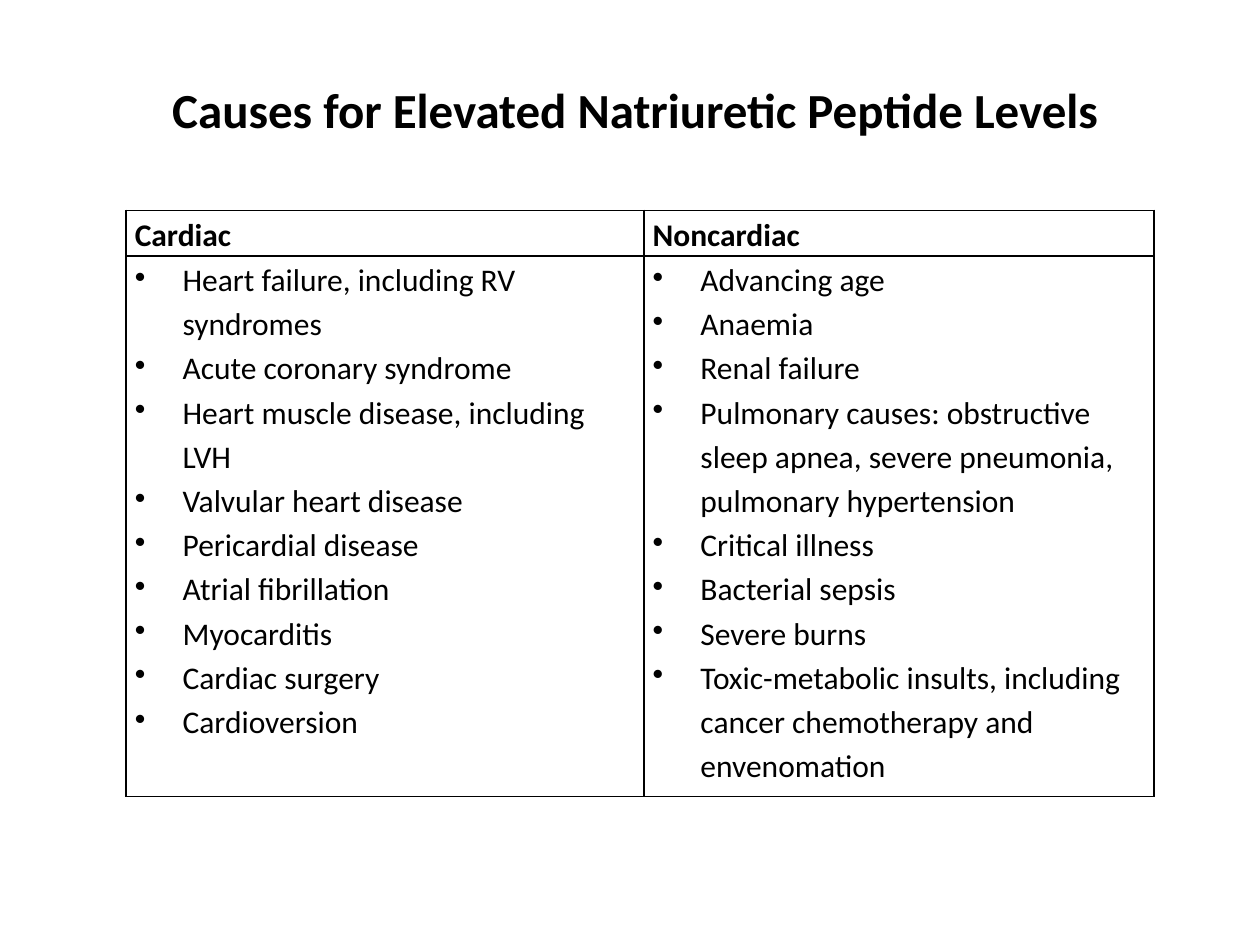
from lxml import etree
from pptx import Presentation
from pptx.dml.color import RGBColor
from pptx.enum.text import MSO_AUTO_SIZE, PP_ALIGN
from pptx.oxml.ns import qn
from pptx.util import Inches, Pt

BLACK = RGBColor(0, 0, 0)
CENTER, JUSTIFY = PP_ALIGN.CENTER, PP_ALIGN.JUSTIFY
GROW = MSO_AUTO_SIZE.SHAPE_TO_FIT_TEXT
COLS = [4.11, 4.05]
ROWS = [0.36, 4.29]
INDENT = Inches(0.38)
INSETS = {"margin_left": Inches(0.07), "margin_right": Inches(0.07),
          "margin_top": 0, "margin_bottom": 0}
CAUSES = {
    "Cardiac": [
        "Heart failure, including RV syndromes",
        "Acute coronary syndrome",
        "Heart muscle disease, including LVH",
        "Valvular heart disease",
        "Pericardial disease",
        "Atrial fibrillation",
        "Myocarditis",
        "Cardiac surgery",
        "Cardioversion",
    ],
    "Noncardiac": [
        "Advancing age",
        "Anaemia",
        "Renal failure",
        "Pulmonary causes: obstructive sleep apnea, severe pneumonia, "
        "pulmonary hypertension",
        "Critical illness",
        "Bacterial sepsis",
        "Severe burns",
        "Toxic-metabolic insults, including cancer chemotherapy and "
        "envenomation",
    ],
}


def write(para, text, size, bold):
    run = para.add_run()
    run.text = text
    look = {"name": "Calibri", "size": Pt(size), "bold": bold}
    for key, value in look.items():
        setattr(run.font, key, value)
    run.font.color.rgb = BLACK


def frame(cell):
    """Draw a thin black line on all four sides of a cell."""
    props = cell._tc.get_or_add_tcPr()
    for spot, side in enumerate(("lnL", "lnR", "lnT", "lnB")):
        line = etree.Element(qn(f"a:{side}"), w=str(Pt(1)))
        fill = etree.SubElement(line, qn("a:solidFill"))
        etree.SubElement(fill, qn("a:srgbClr"), val=str(BLACK))
        props.insert(spot, line)


prs = Presentation()
prs.slide_width, prs.slide_height = Inches(10), Inches(7.5)
slide = prs.slides.add_slide(prs.slide_layouts[6])

grid = slide.shapes.add_table(
    len(ROWS), len(COLS), Inches(1), Inches(1.67),
    Inches(sum(COLS)), Inches(sum(ROWS)))
table = grid.table
table.horz_banding = False
for col, width in zip(table.columns, COLS):
    col.width = Inches(width)
for row, height in zip(table.rows, ROWS):
    row.height = Inches(height)

for c, (head, items) in enumerate(CAUSES.items()):
    for r, lines in enumerate(([head], items)):
        cell = table.cell(r, c)
        for key, value in INSETS.items():
            setattr(cell, key, value)
        cell.fill.background()
        frame(cell)
        for i, text in enumerate(lines):
            text_frame = cell.text_frame
            para = text_frame.add_paragraph() if i else text_frame.paragraphs[0]
            para.line_spacing = 1.15
            write(para, text, 18, r == 0)
            if r:
                props = para._p.get_or_add_pPr()
                props.set("marL", str(INDENT))
                props.set("indent", str(-INDENT))
                etree.SubElement(props, qn("a:buChar"), char="•")
                tabs = etree.SubElement(props, qn("a:tabLst"))
                etree.SubElement(tabs, qn("a:tab"), pos=str(Inches(0.5)), algn="l")

table.cell(1, 1).text_frame.paragraphs[0].alignment = JUSTIFY

title = slide.shapes.add_textbox(
    Inches(1.25), Inches(0.58), Inches(7.58), Inches(0.57)).text_frame
title.word_wrap = True
title.auto_size = GROW
para = title.paragraphs[0]
para.alignment = CENTER
write(para, "Causes for Elevated Natriuretic Peptide Levels", 28, True)

prs.save("out.pptx")
